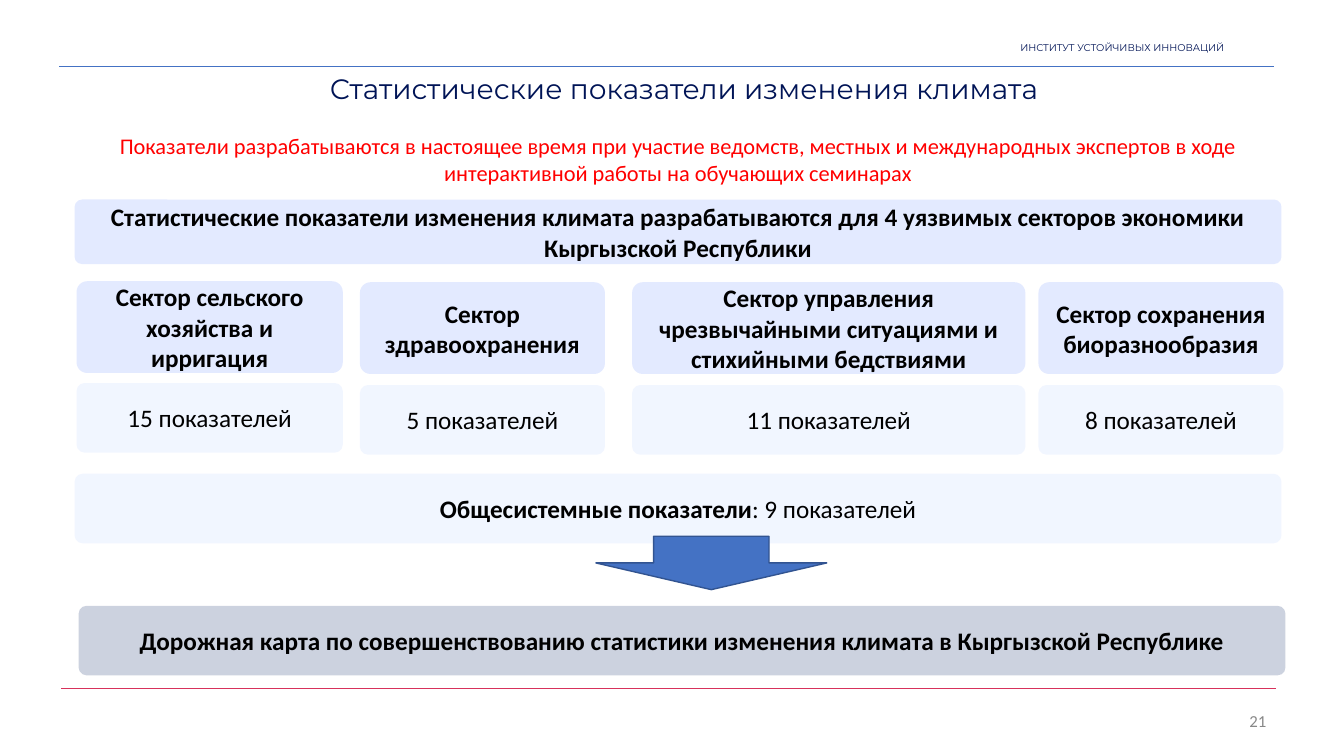
from lxml import etree
from pptx import Presentation
from pptx.dml.color import RGBColor
from pptx.enum import shapes, text
from pptx.oxml import ns
from pptx.util import Inches, Pt

# Content
INSTITUTE = "ИНСТИТУТ УСТОЙЧИВЫХ ИННОВАЦИЙ"
TITLE = "Статистические показатели изменения климата"
NOTICE = ("Показатели разрабатываются в настоящее время при участие ведомств, местных и "
          "международных экспертов в ходе интерактивной работы на обучающих семинарах")
SCOPE = ("Статистические показатели изменения климата разрабатываются для 4 уязвимых "
         "секторов экономики Кыргызской Республики")
# name, indicators, left, width, top of the name box, top of the indicator box
SECTORS = [
    ("Сектор сельского хозяйства и ирригация", "15 показателей", 0.76, 2.64, 2.79, 3.8),
    ("Сектор здравоохранения", "5 показателей", 3.57, 2.43, 2.8, 3.82),
    ("Сектор управления чрезвычайными ситуациями и стихийными бедствиями",
     "11 показателей", 6.27, 3.9, 2.8, 3.82),
    ("Сектор сохранения биоразнообразия", "8 показателей", 10.3, 2.43, 2.8, 3.82),
]
COMMON = ("Общесистемные показатели", ": 9 показателей")
ROADMAP = ("Дорожная карта по совершенствованию статистики изменения климата "
           "в Кыргызской Республике")
SLIDE_NUMBER = "21"

# Style
NAVY = RGBColor(0x00, 0x14, 0x56)
BLACK = RGBColor(0, 0, 0)
RED = RGBColor(0xFF, 0, 0)
GRAY = RGBColor(0x88, 0x88, 0x88)
BLUE = RGBColor(0x44, 0x72, 0xC4)
DARK_BLUE = RGBColor(0x32, 0x54, 0x91)
CRIMSON = RGBColor(0xD7, 0x31, 0x5B)
HEADING_TINT = RGBColor(0x75, 0x96, 0xFF)
COUNT_TINT = RGBColor(0xBD, 0xD2, 0xFF)
ROADMAP_TINT = RGBColor(0x00, 0x20, 0x60)
TINT_ALPHA = 20000
CORNER = 0.115
BAND_WIDTH, HEADING_HEIGHT, ROW_HEIGHT = 11.97, 0.91, 0.69
CENTER, RIGHT = text.PP_ALIGN.CENTER, text.PP_ALIGN.RIGHT

presentation = Presentation()
presentation.slide_width, presentation.slide_height = Inches(13.33), Inches(7.5)
slide = presentation.slides.add_slide(presentation.slide_layouts[6])


def write(shape, runs, size, color, align=CENTER, font="Calibri",
          anchor=text.MSO_ANCHOR.MIDDLE):
    """Fill one paragraph with (words, bold) runs."""
    frame = shape.text_frame
    frame.word_wrap = True
    frame.vertical_anchor = anchor
    paragraph = frame.paragraphs[0]
    paragraph.alignment = align
    for words, bold in runs:
        run = paragraph.add_run()
        run.text = words
        run.font.name, run.font.size, run.font.bold = font, Pt(size), bold
        run.font.color.rgb = color
    return paragraph


def add_label(words, box, size, color, **style):
    label = slide.shapes.add_textbox(*map(Inches, box))
    style.setdefault("anchor", text.MSO_ANCHOR.TOP)
    return write(label, [(words, False)], size, color, **style)


def add_card(runs, left, top, width, height, tint):
    card = slide.shapes.add_shape(shapes.MSO_SHAPE.ROUNDED_RECTANGLE,
                                  *map(Inches, (left, top, width, height)))
    card.adjustments[0] = CORNER
    card.shadow.inherit = False
    card.fill.solid()
    card.fill.fore_color.rgb = tint
    color = card.fill._xPr.find(ns.qn("a:solidFill"))[0]
    etree.SubElement(color, ns.qn("a:alpha"), val=str(TINT_ALPHA))
    card.line.fill.background()
    write(card, runs, 18, BLACK)


def add_rule(left, right, y, color):
    rule = slide.shapes.add_connector(shapes.MSO_CONNECTOR.STRAIGHT,
                                      *map(Inches, (left, y, right, y)))
    rule.line.color.rgb, rule.line.width = color, Pt(0.75)
    etree.SubElement(rule._element.spPr, ns.qn("a:effectLst"))


# Header and footer
add_label(INSTITUTE, (9.79, 0.36, 2.45, 0.22), 7, NAVY, align=RIGHT, font="Montserrat")
add_rule(0.59, 12.64, 0.66, BLUE)
add_rule(0.61, 12.66, 6.83, CRIMSON)
add_label(SLIDE_NUMBER, (9.66, 6.95, 3, 0.4), 12, GRAY, align=RIGHT,
          anchor=text.MSO_ANCHOR.MIDDLE)

# Title and notice
title = add_label(TITLE, (0.78, 0.7, 11.76, 0.92), 20, NAVY, font="Montserrat")
title.line_spacing = 0.9
title_properties = title._p.get_or_add_pPr()
title_properties.set("marL", str(Inches(0.5)))
title_properties.set("indent", str(Inches(-0.25)))
add_label(NOTICE, (0.75, 1.26, 11.95, 0.64), 16, RED)

# Sectors with their indicator counts
add_card([(SCOPE, True)], 0.74, 1.98, BAND_WIDTH, 0.64, HEADING_TINT)
for name, count, left, width, name_top, count_top in SECTORS:
    add_card([(name, True)], left, name_top, width, HEADING_HEIGHT, HEADING_TINT)
    add_card([(count, False)], left, count_top, width, ROW_HEIGHT, COUNT_TINT)

# Common indicators leading to the roadmap
add_card(list(zip(COMMON, (True, False))), 0.74, 4.7, BAND_WIDTH, ROW_HEIGHT, COUNT_TINT)
add_card([(ROADMAP, True)], 0.78, 6.01, BAND_WIDTH, ROW_HEIGHT, ROADMAP_TINT)
arrow = slide.shapes.add_shape(shapes.MSO_SHAPE.DOWN_ARROW,
                               *map(Inches, (5.91, 5.32, 2.29, 0.53)))
arrow.shadow.inherit = False
arrow.fill.solid()
arrow.fill.fore_color.rgb = BLUE
arrow.line.color.rgb, arrow.line.width = DARK_BLUE, Pt(1)

presentation.save("out.pptx")
